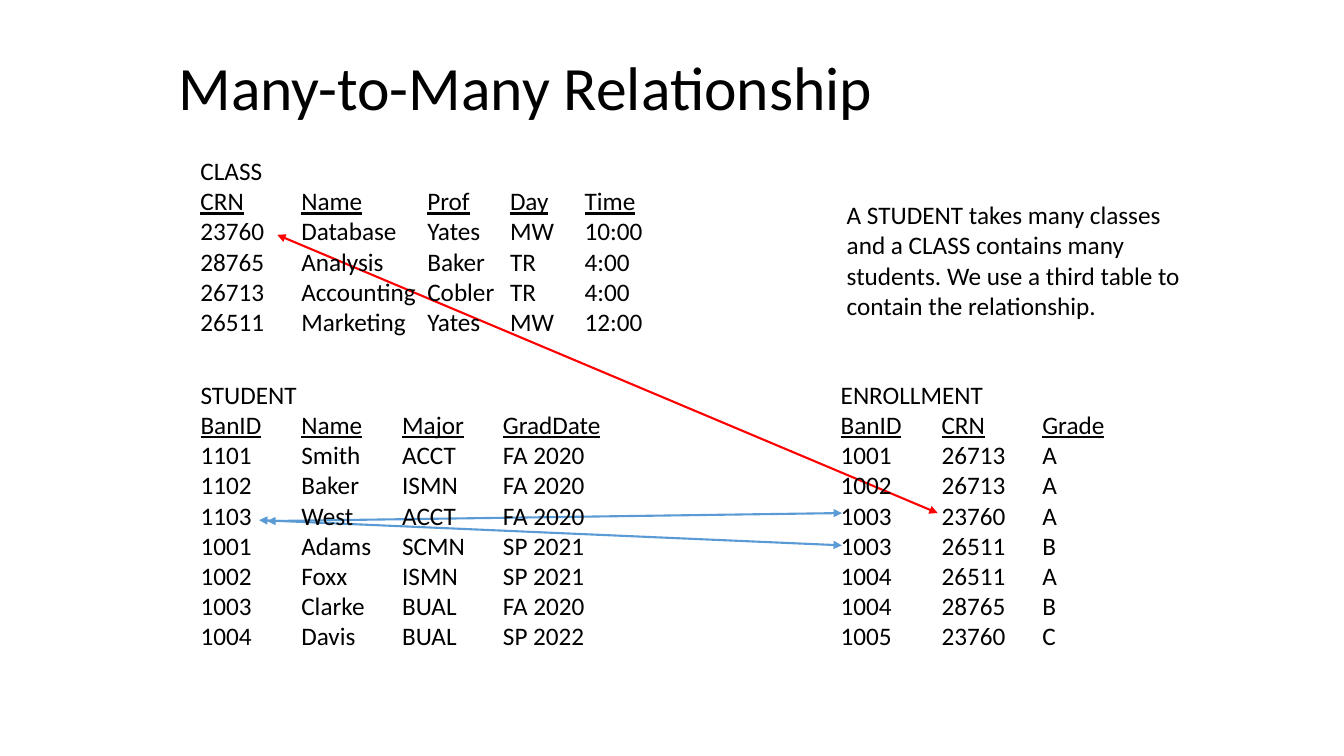
"""Build a slide showing a many-to-many relationship through an enrollment table."""
from lxml import etree
from pptx import Presentation
from pptx import util as u
from pptx.dml.color import RGBColor
from pptx.enum import shapes, text
from pptx.oxml import ns

THEME = {
    "font": "Calibri",
    "ink": RGBColor.from_string("000000"),
    "class_link": RGBColor.from_string("FF0000"),
    "student_link": RGBColor.from_string("5B9BD5"),
    "title": u.Pt(44),
    "body": u.Pt(18),
    "link": u.Pt(1.5),
}


def write(paragraph, wording, size, underline=None):
    """Add a run in the theme font."""
    run = paragraph.add_run()
    run.text = wording
    formats = {"name": THEME["font"], "size": size, "underline": underline}
    for name, value in formats.items():
        setattr(run.font, name, value)
    run.font.color.rgb = THEME["ink"]


def add_frame(left, top, width, height):
    """Add a wrapping text box that grows with its text."""
    box = slide.shapes.add_textbox(*map(u.Inches, (left, top, width, height)))
    box.text_frame.word_wrap = True
    box.text_frame.auto_size = text.MSO_AUTO_SIZE.SHAPE_TO_FIT_TEXT
    return box.text_frame


deck = Presentation()
deck.slide_width, deck.slide_height = u.Inches(13.33), u.Inches(7.5)
slide = deck.slides.add_slide(deck.slide_layouts[5])

heading = slide.shapes.title
heading_place = {"left": 1.67, "top": 0.29, "width": 8.5, "height": 1.21}
for name, value in heading_place.items():
    setattr(heading, name, u.Inches(value))
heading.text_frame.vertical_anchor = text.MSO_ANCHOR.MIDDLE
heading_line = heading.text_frame.paragraphs[0]
heading_line.alignment = text.PP_ALIGN.LEFT
heading_line.line_spacing = 0.9
write(heading_line, "Many-to-Many Relationship", THEME["title"])

explanation = add_frame(8.3, 1.93, 3.73, 1.31)
write(
    explanation.paragraphs[0],
    "A STUDENT takes many classes and a CLASS contains many students. "
    "We use a third table to contain the relationship.",
    THEME["body"],
)

key_links = [
    ("class_link", (2.75, 2.33, 9.3, 5.09)),
    ("student_link", (2.57, 5.16, 8.35, 5.41)),
    ("student_link", (2.65, 5.17, 8.35, 5.09)),
]
for colour, ends in key_links:
    link = slide.shapes.add_connector(
        shapes.MSO_CONNECTOR.STRAIGHT, *map(u.Inches, ends))
    link.line.color.rgb = THEME[colour]
    link.line.width = THEME["link"]
    outline = link.line._get_or_add_ln()
    for arrowhead in ("a:headEnd", "a:tailEnd"):
        etree.SubElement(outline, ns.qn(arrowhead), type="triangle")
    etree.SubElement(link._element.spPr, ns.qn("a:effectLst"))

relations = [
    ("CLASS", (1.89, 1.49, 5.07, 2.22), (1, 2.25, 3.07, 3.81), [
        ("CRN", "Name", "Prof", "Day", "Time"),
        ("23760", "Database", "Yates", "MW", "10:00"),
        ("28765", "Analysis", "Baker", "TR", "4:00"),
        ("26713", "Accounting", "Cobler", "TR", "4:00"),
        ("26511", "Marketing", "Yates", "MW", "12:00"),
    ]),
    ("STUDENT", (1.89, 3.71, 4.52, 2.83), (1, 2, 3), [
        ("BanID", "Name", "Major", "GradDate"),
        ("1101", "Smith", "ACCT", "FA 2020"),
        ("1102", "Baker", "ISMN", "FA 2020"),
        ("1103", "West", "ACCT", "FA 2020"),
        ("1001", "Adams", "SCMN", "SP 2021"),
        ("1002", "Foxx", "ISMN", "SP 2021"),
        ("1003", "Clarke", "BUAL", "FA 2020"),
        ("1004", "Davis", "BUAL", "SP 2022"),
    ]),
    ("ENROLLMENT", (8.24, 3.71, 2.9, 2.83), (1, 2), [
        ("BanID", "CRN", "Grade"),
        ("1001", "26713", "A"),
        ("1002", "26713", "A"),
        ("1003", "23760", "A"),
        ("1003", "26511", "B"),
        ("1004", "26511", "A"),
        ("1004", "28765", "B"),
        ("1005", "23760", "C"),
    ]),
]
for relation, place, column_stops, records in relations:
    listing = add_frame(*place)
    write(listing.paragraphs[0], relation, THEME["body"])
    for number, record in enumerate(records):
        row = listing.add_paragraph()
        stops = etree.SubElement(row._p.get_or_add_pPr(), ns.qn("a:tabLst"))
        for stop in column_stops:
            etree.SubElement(
                stops, ns.qn("a:tab"), pos=str(u.Inches(stop)), algn="l")
        if number:
            write(row, "\t".join(record), THEME["body"])
            continue
        for column, field in enumerate(record):
            if column:
                write(row, "\t", THEME["body"])
            write(row, field, THEME["body"], underline=True)

deck.save("out.pptx")
